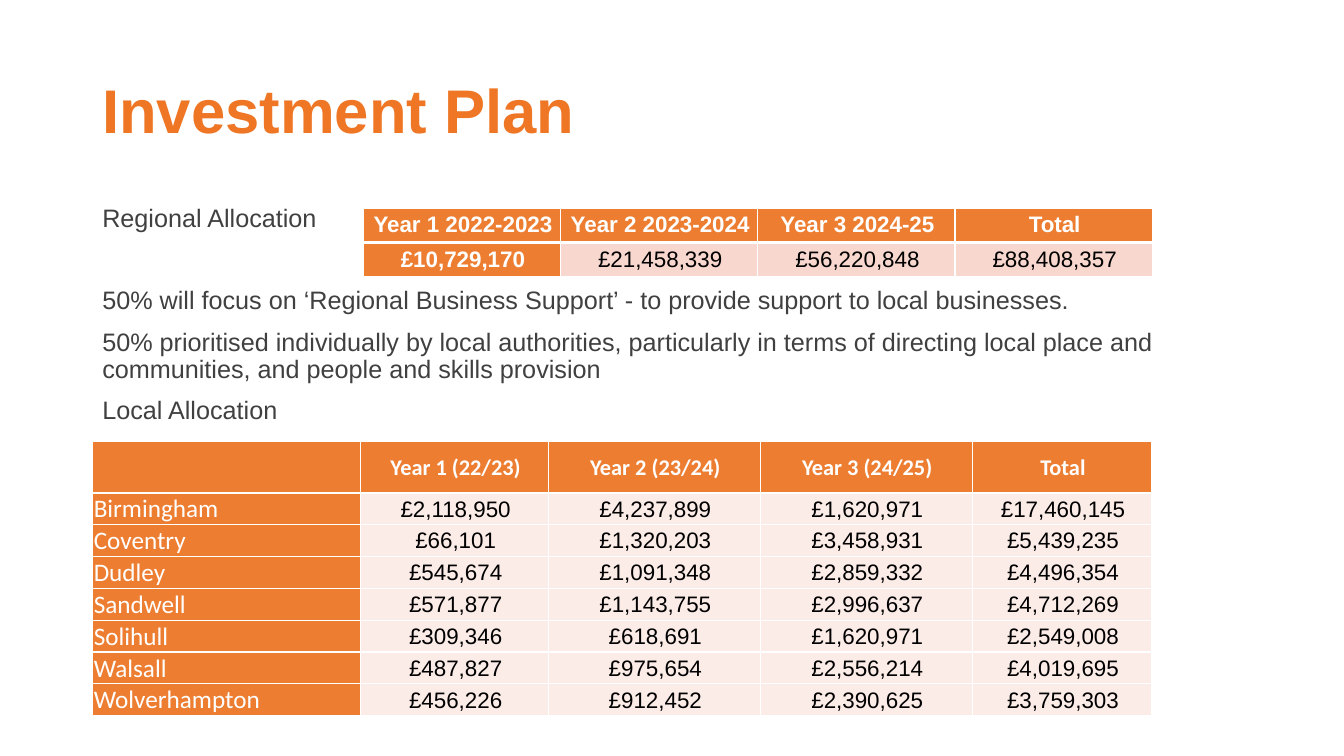
from lxml import etree
from pptx import Presentation
from pptx.dml.color import RGBColor
from pptx.enum.text import MSO_ANCHOR, PP_ALIGN
from pptx.oxml.ns import qn
from pptx.util import Pt

TOP, MIDDLE = MSO_ANCHOR.TOP, MSO_ANCHOR.MIDDLE
LEFT, CENTER = PP_ALIGN.LEFT, PP_ALIGN.CENTER

TITLE_ORANGE = RGBColor(0xEE, 0x76, 0x24)
ORANGE = RGBColor(0xED, 0x7D, 0x31)
PINK = RGBColor(0xF8, 0xD7, 0xCE)
PALE_PINK = RGBColor(0xFC, 0xEC, 0xE8)
GREY = RGBColor(0x40, 0x40, 0x40)
BLACK = RGBColor(0, 0, 0)
WHITE = RGBColor(0xFF, 0xFF, 0xFF)

REGIONAL_ROWS = [
    ["Year 1 2022-2023", "Year 2 2023-2024", "Year 3 2024-25", "Total"],
    ["£10,729,170", "£21,458,339", "£56,220,848", "£88,408,357"],
]
LOCAL_ROWS = [
    ["", "Year 1 (22/23)", "Year 2 (23/24)", "Year 3 (24/25)", "Total"],
    ["Birmingham", "£2,118,950", "£4,237,899", "£1,620,971", "£17,460,145"],
    ["Coventry", "£66,101", "£1,320,203", "£3,458,931", "£5,439,235"],
    ["Dudley", "£545,674", "£1,091,348", "£2,859,332", "£4,496,354"],
    ["Sandwell", "£571,877", "£1,143,755", "£2,996,637", "£4,712,269"],
    ["Solihull", "£309,346", "£618,691", "£1,620,971", "£2,549,008"],
    ["Walsall", "£487,827", "£975,654", "£2,556,214", "£4,019,695"],
    ["Wolverhampton", "£456,226", "£912,452", "£2,390,625", "£3,759,303"],
]
# Each body line with the space before it
BODY_LINES = [
    ("Regional Allocation", 0),
    ("50% will focus on ‘Regional Business Support’ - to provide support "
     "to local businesses.", 39),
    ("50% prioritised individually by local authorities, particularly in terms "
     "of directing local place and communities, and people and skills provision", 10),
    ("Local Allocation", 10),
]


def write(para, text, font="Arial", size=16, color=BLACK, bold=False,
          align=LEFT, indent=0, line_spacing=None, space_before=0):
    """Put formatted text into a paragraph."""
    para.alignment = align
    para.line_spacing = line_spacing
    para.space_before = Pt(space_before)
    if indent:
        properties = para._p.get_or_add_pPr()
        properties.set("marL", str(Pt(indent)))
        properties.set("indent", "0")
    span = para.add_run()
    span.text = text
    span.font.name = font
    span.font.size = Pt(size)
    span.font.bold = bold
    span.font.color.rgb = color


def draw_borders(cell, bottom):
    """Give a cell white borders, 1 pt wide except at the bottom."""
    properties = cell._tc.get_or_add_tcPr()
    for side, width in (("L", 1), ("R", 1), ("T", 1), ("B", bottom)):
        line = etree.SubElement(properties, qn(f"a:ln{side}"), w=str(Pt(width)))
        fill = etree.SubElement(line, qn("a:solidFill"))
        etree.SubElement(fill, qn("a:srgbClr"), val=str(WHITE))


class InvestmentPage:
    """The current slide and its style."""

    def __init__(self, deck):
        self.page = deck.slides.add_slide(deck.slide_layouts[6])

    def text(self, left, top, width, height, lines, anchor=TOP, **style):
        box = self.page.shapes.add_textbox(Pt(left), Pt(top), Pt(width), Pt(height))
        frame = box.text_frame
        frame.word_wrap = True
        frame.vertical_anchor = anchor
        for index, (line, gap) in enumerate(lines):
            para = frame.add_paragraph() if index else frame.paragraphs[0]
            write(para, line, line_spacing=0.9, space_before=gap, **style)

    def table(self, left, top, widths, heights, rows, margins, cell_style, header_bottom=1):
        table = self.page.shapes.add_table(
            len(rows), len(widths), Pt(left), Pt(top),
            Pt(sum(widths)), Pt(sum(heights))).table
        table.horz_banding = False
        for column, width in zip(table.columns, widths):
            column.width = Pt(width)
        for row, height in zip(table.rows, heights):
            row.height = Pt(height)
        side, above = margins
        for r, row in enumerate(rows):
            for c, value in enumerate(row):
                cell = table.cell(r, c)
                cell.margin_left = cell.margin_right = Pt(side)
                cell.margin_top, cell.margin_bottom = Pt(above), Pt(0)
                cell.vertical_anchor = MIDDLE
                draw_borders(cell, 1 if r else header_bottom)
                fill, style = cell_style(r, c)
                cell.fill.solid()
                cell.fill.fore_color.rgb = fill
                if value:
                    write(cell.text_frame.paragraphs[0], value, **style)


def regional_style(row, column):
    centred = {"align": CENTER, "indent": 1.44}
    if row == 0 or column == 0:
        return ORANGE, {"color": WHITE, "bold": True, **centred}
    return PINK, centred


def local_style(row, column):
    centred = {"align": CENTER, "indent": 1.44}
    if row == 0:
        return ORANGE, {"font": "Calibri", "color": WHITE, "bold": True, **centred}
    if column == 0:
        return ORANGE, {"font": "Calibri", "size": 18, "color": WHITE}
    return PALE_PINK, centred


def main():
    deck = Presentation()
    deck.slide_width, deck.slide_height = Pt(960), Pt(540)
    plan = InvestmentPage(deck)

    # Title and body text
    plan.text(66, 28.75, 828, 104.4, [("Investment Plan", 0)], MIDDLE,
              size=44, color=TITLE_ORANGE, bold=True)
    plan.text(66, 143.75, 828, 342.6, BODY_LINES, size=18, color=GREY)

    # Regional allocation
    plan.table(259.5, 148.6, [140.9] * 4, [24.6] * 2, REGIONAL_ROWS,
               (4.3, 0), regional_style, header_bottom=3)

    # Allocation by local authority
    plan.table(66.3, 315.5, [191.5, 133.9, 151.4, 151.4, 128.2],
               [36.6] + [22.75] * 7, LOCAL_ROWS, (0.7, 0.7), local_style)

    deck.save("out.pptx")


if __name__ == "__main__":
    main()
